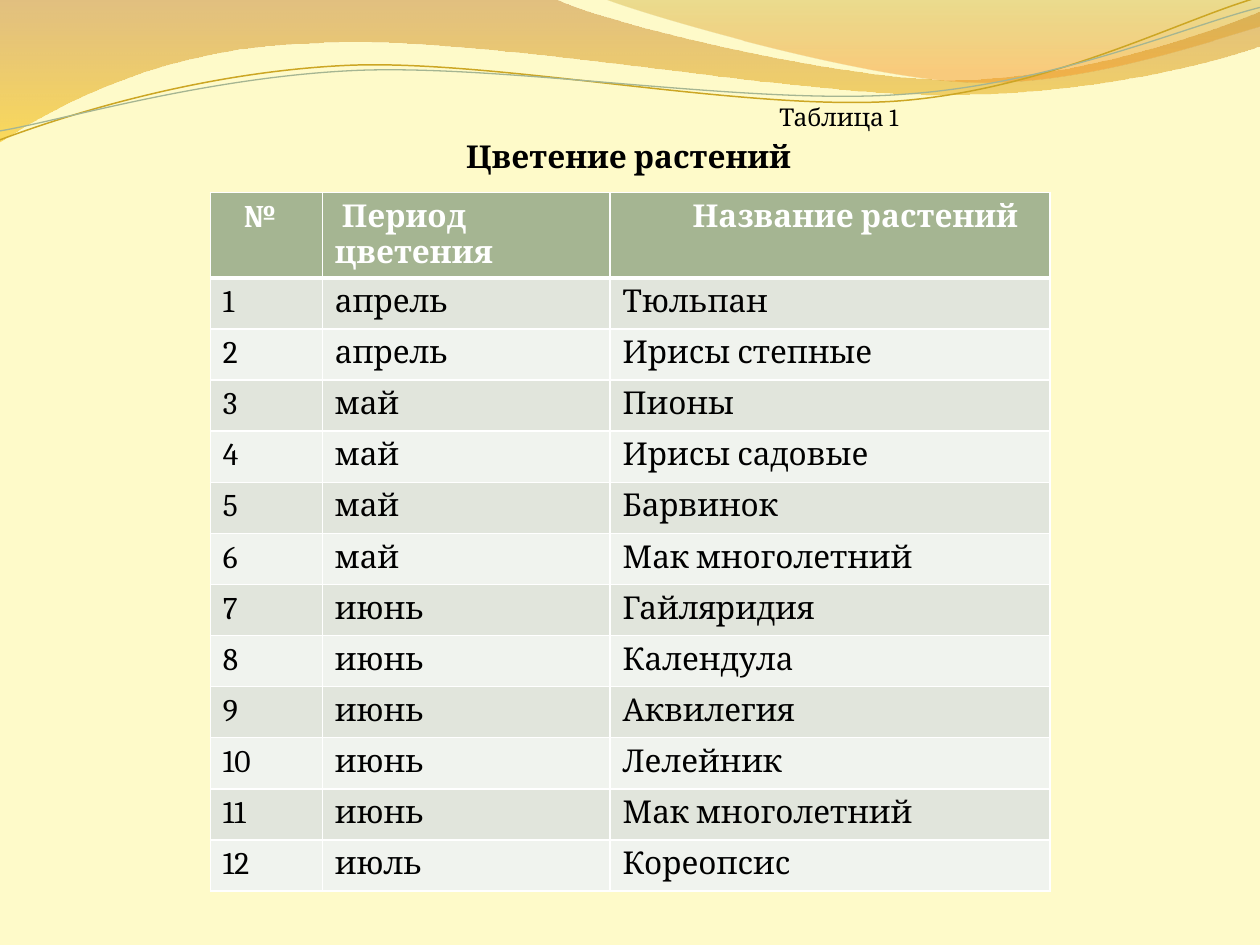
import pptx
import pptx.dml.color
import pptx.enum.text
import pptx.oxml.ns
import pptx.util
from lxml import etree

Cm, Pt = pptx.util.Cm, pptx.util.Pt
qn = pptx.oxml.ns.qn

COLORS = {
    "background": "FEFAC9", "text": "000000", "white": "FFFFFF",
    "header": "A5B592", "odd_row": "E1E5DC", "even_row": "F0F3EE",
    "brown": "C07A28", "yellow": "F7BF00", "olive": "C09709",
    "orange": "F59320", "gold": "CCA624", "sage": "A5B592",
}
FONT = "Cambria"

# Lengths in cm. A two-number step is a corner, a six-number step a Bezier curve.
# Gradient stops: position, color, opacity in percent.
BANDS = [
    {"steps": [(0, 0), (11.18, -0.03),
               (12.09, 0.43, 16.87, 1.6, 19.25, 1.6),
               (21.67, 1.6, 24.33, 0.66, 25.4, 0.23), (25.43, 0.91),
               (24.97, 1.12, 22.1, 1.93, 18.95, 1.91),
               (15.8, 1.91, 9.7, 0.71, 6.53, 0.86),
               (3.28, 0.91, 1.17, 2.11, -0.03, 2.87)],
     "stops": [(0, "brown", 45), (1, "yellow", 55)]},
    {"steps": [(12.17, -0.03),
               (12.93, 0.28, 17.32, 1.57, 19.53, 1.65),
               (21.74, 1.75, 24.41, 0.81, 25.4, 0.53), (25.4, 0)],
     "stops": [(0, "olive", 30), (0.8, "orange", 45)]},
]
WAVES = [
    {"steps": [(-0.05, 2.22), (1.19, 1.82, 4.02, 1.04, 7.05, 1.05),
               (10.05, 1.07, 15.02, 2.37, 18.08, 2.29),
               (21.13, 2.2, 23.86, 0.91, 25.41, 0.55)],
     "color": "gold", "width": 0.85},
    {"steps": [(-0.04, 2.04), (1.16, 1.9, 4.17, 1.15, 7.2, 1.16),
               (10.25, 1.18, 15.13, 2.25, 18.19, 2.16),
               (21.22, 2.1, 23.93, 1.06, 25.45, 0.75)],
     "color": "sage", "width": 0.75},
]
WAVE_ROTATION = 357.3

CAPTION = "Таблица 1"
TITLE = "Цветение растений"
HEADINGS = [("№", 0.42), ("Период цветения", 0.14), ("Название растений", 1.41)]
PLANTS = [
    ("апрель", "Тюльпан"), ("апрель", "Ирисы степные"),
    ("май", "Пионы"), ("май", "Ирисы садовые"),
    ("май", "Барвинок"), ("май", "Мак многолетний"),
    ("июнь", "Гайляридия"), ("июнь", "Календула"),
    ("июнь", "Аквилегия"), ("июнь", "Лелейник"),
    ("июнь", "Мак многолетний"), ("июль", "Кореопсис"),
]
COLUMN_WIDTHS = [2.26, 5.8, 8.87]
HEADER_HEIGHT, ROW_HEIGHT = 1.69, 1.03


def rgb(name):
    return pptx.dml.color.RGBColor.from_string(COLORS[name])


def write(paragraph, text, size=18, color="text", bold=False, indent=0, before=0):
    """Fill a paragraph; indent (cm) moves only its first line."""
    run = paragraph.add_run()
    run.text = text
    run.font.name, run.font.size, run.font.bold = FONT, Pt(size), bold
    run.font.color.rgb = rgb(color)
    paragraph.alignment = pptx.enum.text.PP_ALIGN.LEFT
    paragraph.space_before = Pt(before)
    if indent:
        properties = paragraph._p.get_or_add_pPr()
        properties.set("marL", "0")
        properties.set("indent", str(Cm(indent)))


def draw_outline(slide, steps, close):
    """Lay every point as a corner, then join each curve's three into a Bezier."""
    points = [(Cm(x), Cm(y)) for step in steps
              for x, y in zip(step[::2], step[1::2])]
    builder = slide.shapes.build_freeform(*points[0])
    builder.add_line_segments(points[1:], close=close)
    outline = builder.convert_to_shape()
    outline.shadow.inherit = False
    segments = iter(outline._element.spPr.findall(".//" + qn("a:lnTo")))
    for step in steps[1:]:
        segment = next(segments)
        if len(step) == 6:
            segment.tag = qn("a:cubicBezTo")
            for _ in range(2):
                corner = next(segments)
                segment.append(corner[0])
                corner.getparent().remove(corner)
    return outline


def draw_band(slide, steps, stops):
    band = draw_outline(slide, steps, True)
    band.line.fill.background()
    band.fill.gradient()
    band.fill.gradient_angle = 270
    for stop, (position, color, _) in zip(band.fill.gradient_stops, stops):
        stop.position = position
        stop.color.rgb = rgb(color)
    colors = band._element.spPr.findall(".//" + qn("a:srgbClr"))
    for color_element, (_, _, opacity) in zip(colors, stops):
        etree.SubElement(color_element, qn("a:alpha"), val=str(opacity * 1000))


def draw_wave(slide, steps, color, width):
    wave = draw_outline(slide, steps, False)
    wave.rotation = WAVE_ROTATION
    wave.fill.background()
    wave.line.color.rgb = rgb(color)
    wave.line.width = Pt(width)


def set_borders(cell, top, bottom):
    properties = cell._tc.get_or_add_tcPr()
    for side, width in (("L", 1), ("R", 1), ("T", top), ("B", bottom)):
        border = etree.SubElement(properties, qn("a:ln" + side), w=str(Pt(width)))
        fill = etree.SubElement(border, qn("a:solidFill"))
        etree.SubElement(fill, qn("a:srgbClr"), val=COLORS["white"])


def add_heading(slide):
    frame = slide.shapes.add_textbox(Cm(1.3), Cm(1.92), Cm(23), Cm(16.61)).text_frame
    frame.word_wrap = True
    frame.margin_left = frame.margin_right = Cm(0.13)
    frame.margin_top = frame.margin_bottom = Cm(0.13)
    write(frame.paragraphs[0], CAPTION, size=14, indent=14.28)
    write(frame.add_paragraph(), TITLE, bold=True, indent=7.97, before=3.6)


def add_plant_table(slide):
    height = HEADER_HEIGHT + ROW_HEIGHT * len(PLANTS)
    table = slide.shapes.add_table(
        len(PLANTS) + 1, len(HEADINGS), Cm(4.24), Cm(3.88),
        Cm(sum(COLUMN_WIDTHS)), Cm(height)).table
    for column, width in zip(table.columns, COLUMN_WIDTHS):
        column.width = Cm(width)
    rows = [HEADINGS]
    for number, plant in enumerate(PLANTS, 1):
        rows.append([(text, 0) for text in (str(number), *plant)])
    for r, entries in enumerate(rows):
        is_header = r == 0
        table.rows[r].height = Cm(HEADER_HEIGHT if is_header else ROW_HEIGHT)
        fill = "header" if is_header else "odd_row" if r % 2 else "even_row"
        for c, (text, indent) in enumerate(entries):
            cell = table.cell(r, c)
            set_borders(cell, top=3 if r == 1 else 1, bottom=3 if is_header else 1)
            cell.fill.solid()
            cell.fill.fore_color.rgb = rgb(fill)
            if is_header:
                cell.margin_bottom = Cm(0.07)
            write(cell.text_frame.paragraphs[0], text, bold=is_header,
                  color="white" if is_header else "text", indent=indent)


def main():
    presentation = pptx.Presentation()
    presentation.slide_width, presentation.slide_height = Cm(25.4), Cm(19.05)
    slide = presentation.slides.add_slide(presentation.slide_layouts[6])
    slide.background.fill.solid()
    slide.background.fill.fore_color.rgb = rgb("background")
    for band in BANDS:
        draw_band(slide, **band)
    for wave in WAVES:
        draw_wave(slide, **wave)
    add_heading(slide)
    add_plant_table(slide)
    presentation.save("out.pptx")


if __name__ == "__main__":
    main()
